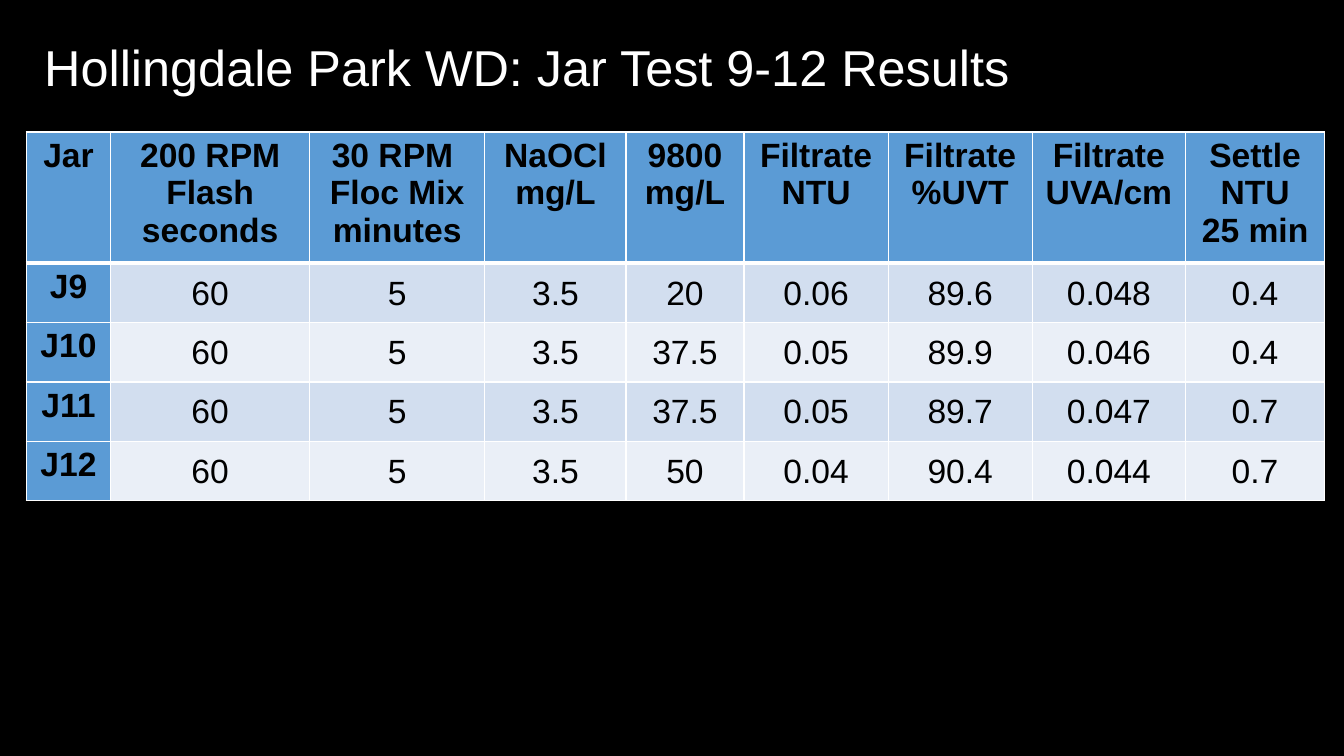
from dataclasses import dataclass

from lxml import etree
from pptx import Presentation
from pptx.dml.color import RGBColor
from pptx.enum.text import MSO_ANCHOR, PP_ALIGN
from pptx.oxml.ns import qn
from pptx.util import Emu, Pt

TOP, MIDDLE = MSO_ANCHOR.TOP, MSO_ANCHOR.MIDDLE
LEFT, CENTER = PP_ALIGN.LEFT, PP_ALIGN.CENTER
SCALE = 9144  # EMU in one px, 100 px to the inch


@dataclass(frozen=True)
class Theme:
    font: str = "Arial"
    back: str = "000000"
    light: str = "FFFFFF"
    ink: str = "000000"
    head: str = "5B9BD5"
    bands: tuple = ("D2DEEF", "EAEFF7")
    title: int = 36
    body: int = 24
    rule: int = 1
    thick: int = 3


HEADS = ["Jar", "200 RPM\nFlash\nseconds", "30 RPM \nFloc Mix\nminutes",
         "NaOCl\nmg/L", "9800\nmg/L", "Filtrate\nNTU", "Filtrate\n%UVT",
         "Filtrate\nUVA/cm", "Settle\nNTU\n25 min"]
JARS = [
    ["J9", "60", "5", "3.5", "20", "0.06", "89.6", "0.048", "0.4"],
    ["J10", "60", "5", "3.5", "37.5", "0.05", "89.9", "0.046", "0.4"],
    ["J11", "60", "5", "3.5", "37.5", "0.05", "89.7", "0.047", "0.7"],
    ["J12", "60", "5", "3.5", "50", "0.04", "90.4", "0.044", "0.7"],
]
WIDTHS = [84, 197, 174, 140, 117, 143, 143, 152, 138]
HEIGHTS = [126] + [59] * len(JARS)


def px(n):
    return Emu(n * SCALE)


def rgb(code):
    return RGBColor.from_string(code)


class Deck:
    def __init__(self, theme, width, height):
        self.theme = theme
        self.show = Presentation()
        self.show.slide_width, self.show.slide_height = px(width), px(height)
        self.slide = self.show.slides.add_slide(self.show.slide_layouts[6])
        fill = self.slide.background.fill
        fill.solid()
        fill.fore_color.rgb = rgb(theme.back)

    def text(self, frame, words, size, color, bold=False, align=LEFT, space=1.0):
        """Fill a text frame with one paragraph per line of words."""
        frame.word_wrap = True
        for i, line in enumerate(words.split("\n")):
            para = frame.add_paragraph() if i else frame.paragraphs[0]
            para.alignment, para.line_spacing = align, space
            run = para.add_run()
            run.text = line
            font = run.font
            font.name, font.size, font.bold = self.theme.font, Pt(size), bold
            font.color.rgb = rgb(color)

    def title(self, words, x, y, w, h):
        frame = self.slide.shapes.add_textbox(px(x), px(y), px(w), px(h)).text_frame
        frame.vertical_anchor = MIDDLE
        self.text(frame, words, self.theme.title, self.theme.light, space=0.9)

    def edge(self, cell, side, width):
        props = cell._tc.get_or_add_tcPr()
        line = etree.SubElement(props, qn("a:ln" + side), w=str(Pt(width)))
        fill = etree.SubElement(line, qn("a:solidFill"))
        etree.SubElement(fill, qn("a:srgbClr"), val=self.theme.light)

    def cell(self, cell, words, row, col):
        theme = self.theme
        label = row == 0 or col == 0
        cell.vertical_anchor = TOP if label else MIDDLE
        pads = (10, 5, 10, 5) if label else (1, 1, 1, 0)
        (cell.margin_left, cell.margin_top,
         cell.margin_right, cell.margin_bottom) = map(px, pads)
        for side in "LRTB":
            heavy = (row, side) in ((0, "B"), (1, "T"))
            self.edge(cell, side, theme.thick if heavy else theme.rule)
        cell.fill.solid()
        color = theme.head if label else theme.bands[(row - 1) % 2]
        cell.fill.fore_color.rgb = rgb(color)
        self.text(cell.text_frame, words, theme.body, theme.ink,
                  bold=label, align=CENTER)

    def table(self, rows, x, y, widths, heights):
        table = self.slide.shapes.add_table(
            len(rows), len(widths), px(x), px(y),
            px(sum(widths)), px(sum(heights))).table
        for col, width in zip(table.columns, widths):
            col.width = px(width)
        for row, height in zip(table.rows, heights):
            row.height = px(height)
        for r, row in enumerate(rows):
            for c, words in enumerate(row):
                self.cell(table.cell(r, c), words, r, c)


def main():
    deck = Deck(Theme(), 1333, 750)
    deck.title("Hollingdale Park WD: Jar Test 9-12 Results", 34, 9, 1270, 122)
    deck.table([HEADS] + JARS, 26, 131, WIDTHS, HEIGHTS)
    deck.show.save("out.pptx")


if __name__ == "__main__":
    main()
